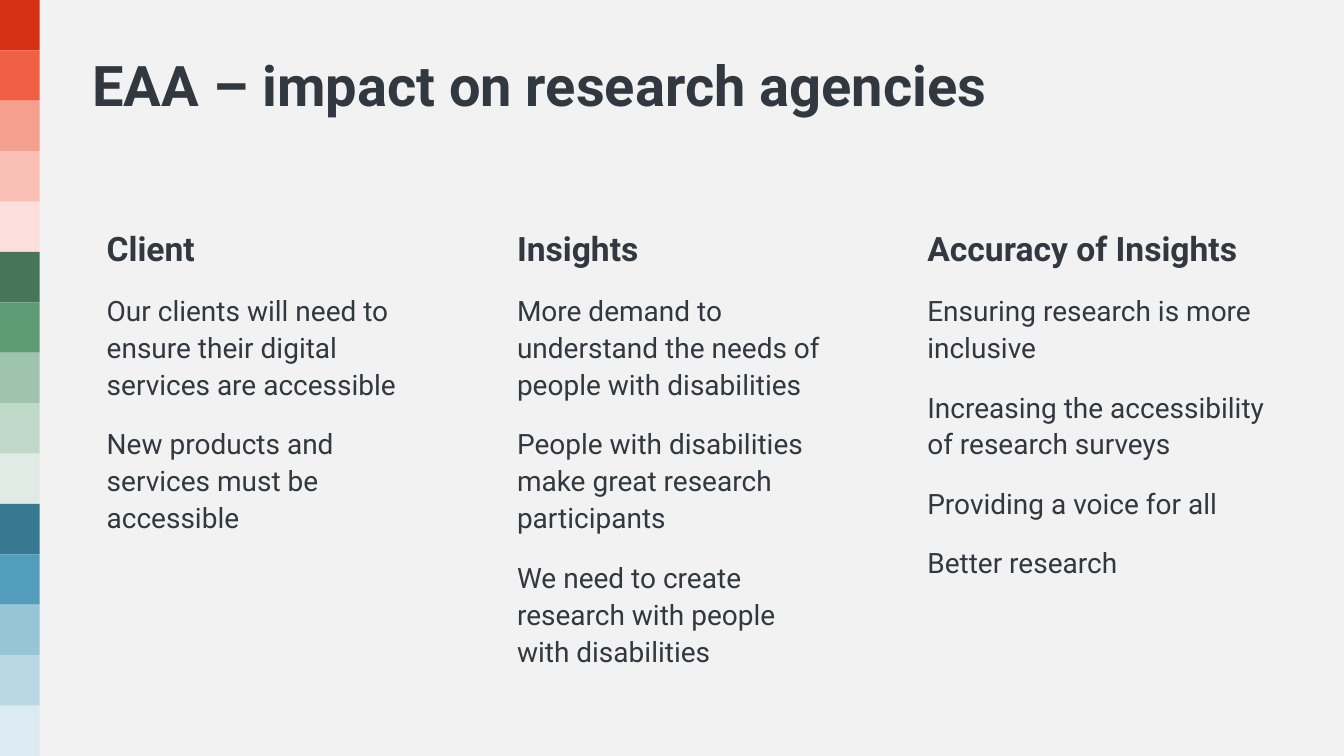
from pptx import Presentation
from pptx.dml.color import RGBColor
from pptx.enum import shapes, text
from pptx.util import Cm, Pt

INK = "31383F"
PAPER = "F2F2F2"
FONT = "Roboto"
STRIPES = [
    "D53112", "EF6045", "F5A08F", "F9BFB5", "FCDFDA",
    "477558", "5F9C76", "9EC4AD", "BFD8C8", "DFEBE4",
    "387891", "519DBB", "97C4D6", "B9D8E4", "DCEBF1",
]
STRIPE_HEIGHT = 1.27
COLUMN_LEFT = 2.44
COLUMN_STEP = 10.34
COLUMN_TOP = 5.51
COLUMNS = [
    (8.2, 10.36, "Client", [
        "Our clients will need to ensure their digital services are accessible",
        "New products and services must be accessible",
    ]),
    (8.2, 12.47, "Insights", [
        "More demand to understand the needs of people with disabilities",
        "People with disabilities make great research participants",
        "We need to create research with people with disabilities",
    ]),
    (9.12, 12.88, "Accuracy of Insights", [
        "Ensuring research is more inclusive",
        "Increasing the accessibility of research surveys",
        "Providing a voice for all",
        "Better research",
    ]),
]


def paint(color_format, color):
    color_format.rgb = RGBColor.from_string(color)


def add_block(page, left, top, width, height, color):
    box = page.shapes.add_shape(
        shapes.MSO_SHAPE.RECTANGLE, Cm(left), Cm(top), Cm(width), Cm(height)
    )
    box.shadow.inherit = False
    box.fill.solid()
    paint(box.fill.fore_color, color)
    box.line.fill.background()
    return box


def style_para(para, size, bold, spacing):
    para.alignment = text.PP_ALIGN.LEFT
    para.line_spacing = spacing
    para.font.name = FONT
    para.font.size = Pt(size)
    para.font.bold = bold
    paint(para.font.color, INK)


def add_title(page, wording):
    box = page.shapes.add_textbox(Cm(2.08), Cm(0.66), Cm(28.3), Cm(2.46))
    frame = box.text_frame
    frame.word_wrap = True
    frame.vertical_anchor = text.MSO_ANCHOR.BOTTOM
    frame.text = wording
    style_para(frame.paragraphs[0], 40, True, 0.9)


def add_column(page, left, width, height, heading, points):
    box = add_block(page, left, COLUMN_TOP, width, height, PAPER)
    frame = box.text_frame
    frame.word_wrap = True
    frame.vertical_anchor = text.MSO_ANCHOR.TOP
    frame.text = "\n".join([heading, *points])
    for index, para in enumerate(frame.paragraphs):
        is_heading = index == 0
        style_para(para, 24 if is_heading else 20, is_heading, 1.1)
        para.space_before = Pt(0 if is_heading else 10)
        para.space_after = Pt(6)


def main():
    deck = Presentation()
    deck.slide_width = Cm(33.87)
    deck.slide_height = Cm(19.05)
    page = deck.slides.add_slide(deck.slide_layouts[6])
    page.background.fill.solid()
    paint(page.background.fill.fore_color, PAPER)

    for index, color in enumerate(STRIPES):
        add_block(page, 0, index * STRIPE_HEIGHT, 1, STRIPE_HEIGHT, color)
    add_title(page, "EAA – impact on research agencies")
    for index, column in enumerate(COLUMNS):
        add_column(page, COLUMN_LEFT + index * COLUMN_STEP, *column)

    deck.save("out.pptx")


if __name__ == "__main__":
    main()
